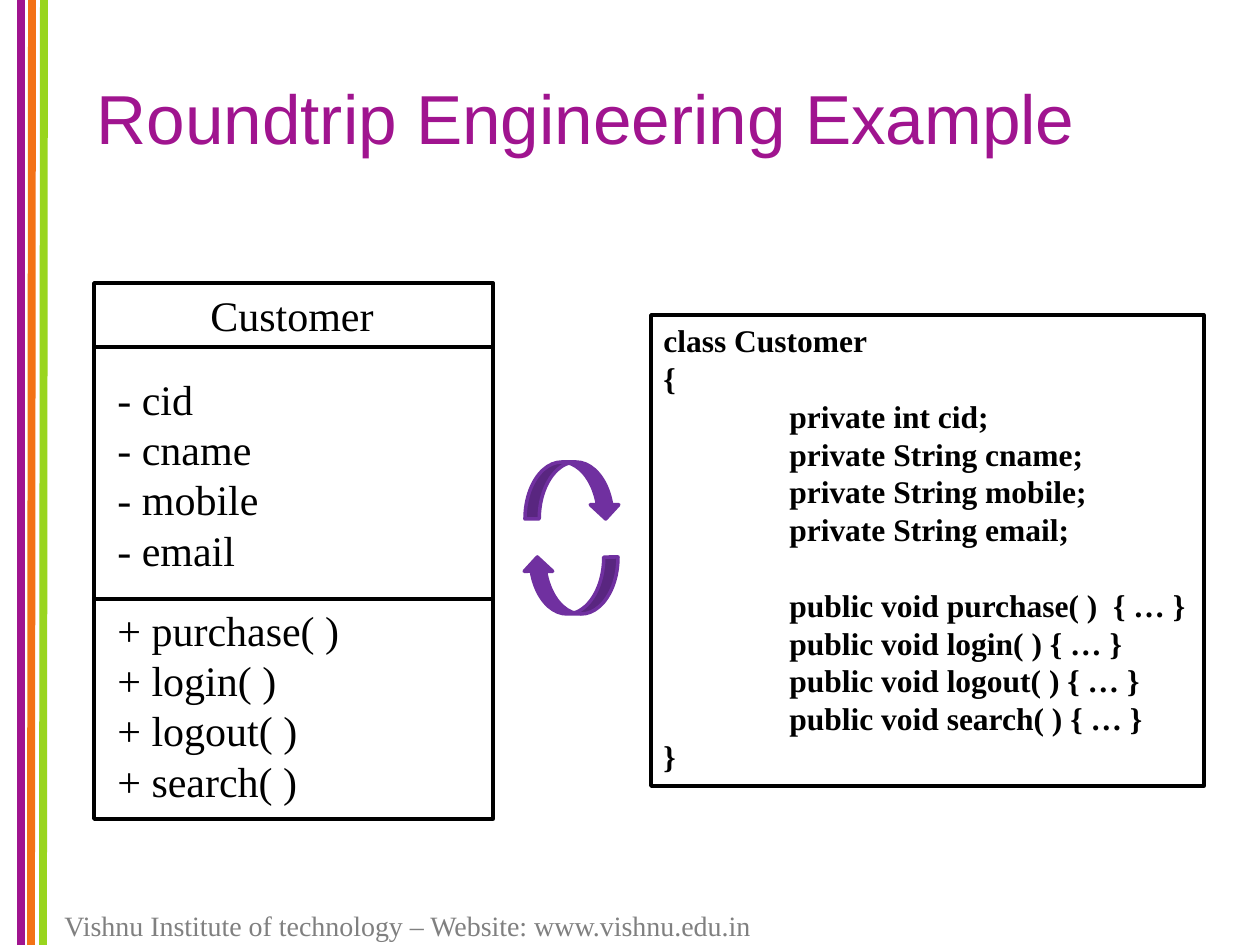
from pptx import Presentation
from pptx.dml.color import RGBColor
from pptx.enum.shapes import MSO_CONNECTOR as CONNECTOR, MSO_SHAPE as SHAPE
from pptx.enum.text import MSO_ANCHOR as ANCHOR, MSO_AUTO_SIZE as AUTO_SIZE, PP_ALIGN as ALIGN
from pptx.oxml.ns import qn
from pptx.util import Emu, Pt
from lxml.etree import SubElement

SCALE = 914400 / 126
SERIF = "Times New Roman"
PURPLE, BLACK, ARROW = "A0148F", "000000", "7030A0"


def px(*lengths):
    return [Emu(round(length * SCALE)) for length in lengths]


def color(hex_text):
    return RGBColor.from_string(hex_text)


presentation = Presentation()
presentation.slide_width, presentation.slide_height = px(1260, 945)
slide = presentation.slides.add_slide(presentation.slide_layouts[5])
shapes = slide.shapes

# Title
title = shapes.title
title.left, title.top, title.width, title.height = px(84, 38, 1113, 157)
title.text_frame.text = "Roundtrip Engineering Example"
title.text_frame.vertical_anchor = ANCHOR.MIDDLE
title.text_frame.auto_size = AUTO_SIZE.NONE
paragraph = title.text_frame.paragraphs[0]
paragraph.alignment = ALIGN.LEFT
paragraph.font.name, paragraph.font.size = "Arial", Pt(39.6)
paragraph.font.color.rgb = color(PURPLE)

# Class box, code box and the two round-trip arrows
boxes = {}
for name, preset, place, fill, line, rotation in [
    ("class", SHAPE.RECTANGLE, (94, 283, 399, 536), "FFFFFF", BLACK, 0),
    ("code", SHAPE.RECTANGLE, (651, 315, 553, 471), None, BLACK, 0),
    ("forward", SHAPE.CURVED_DOWN_ARROW, (525, 462, 95, 57), ARROW, ARROW, 0),
    ("reverse", SHAPE.CURVED_DOWN_ARROW, (523, 557, 95, 57), ARROW, ARROW, 180),
]:
    shape = shapes.add_shape(preset, *px(*place))
    shape.shadow.inherit = False
    shape.rotation = rotation
    if fill:
        shape.fill.solid()
        shape.fill.fore_color.rgb = color(fill)
    else:
        shape.fill.background()
    shape.line.color.rgb = color(line)
    shape.line.width = Pt(2)
    boxes[name] = shape

# Side stripes and class compartment dividers
for start_x, start_y, end_x, end_y, line, width in [
    (21, 0, 21, 945, PURPLE, 4.5),
    (32, 0, 31, 945, "F37216", 4.5),
    (44, 0, 43, 945, "99D51E", 4.5),
    (94, 347, 493, 347, BLACK, 2.25),
    (94, 599, 493, 599, BLACK, 2.25),
]:
    connector = shapes.add_connector(CONNECTOR.STRAIGHT, *px(start_x, start_y, end_x, end_y))
    connector.line.color.rgb = color(line)
    connector.line.width = Pt(width)
    SubElement(connector._element.spPr, qn("a:effectLst"))

# Class text, code and footer
fields = ["- cid", "- cname", "- mobile", "- email"]
methods = ["+ purchase( )", "+ login( )", "+ logout( )", "+ search( )"]
first_method = "\tpublic void purchase( )  { … }"
code = [
    "class Customer",
    "{",
    "\tprivate int cid;",
    "\tprivate String cname;",
    "\tprivate String mobile;",
    "\tprivate String email;",
    first_method,
    "\tpublic void login( ) { … }",
    "\tpublic void logout( ) { … }",
    "\tpublic void search( ) { … }",
    "}",
]
footer = ["Vishnu Institute of technology – Website: www.vishnu.edu.in"]
for place, lines, size, text_color in [
    ((198, 283, 190, 63), ["Customer"], 24, BLACK),
    ((105, 367, 168, 217), fields, 24, BLACK),
    ((105, 598, 249, 217), methods, 24, BLACK),
    ((52, 902, 722, 47), footer, 16, "808080"),
    (None, code, 18, BLACK),
]:
    box = shapes.add_textbox(*px(*place)) if place else boxes["code"]
    frame = box.text_frame
    frame.word_wrap = False
    frame.vertical_anchor = ANCHOR.TOP
    frame.text = "\n".join(lines)
    for paragraph in frame.paragraphs:
        paragraph.alignment = ALIGN.LEFT
        if paragraph.text == first_method:
            paragraph.space_before = Pt(21.6)
        if paragraph.text.startswith("\t"):
            tabs = SubElement(paragraph._p.get_or_add_pPr(), qn("a:tabLst"))
            SubElement(tabs, qn("a:tab"), pos=str(px(126)[0]), algn="l")
        font_format = {"name": SERIF, "size": Pt(size), "bold": lines is code}
        for attribute, value in font_format.items():
            setattr(paragraph.font, attribute, value)
        paragraph.font.color.rgb = color(text_color)

presentation.save("out.pptx")
